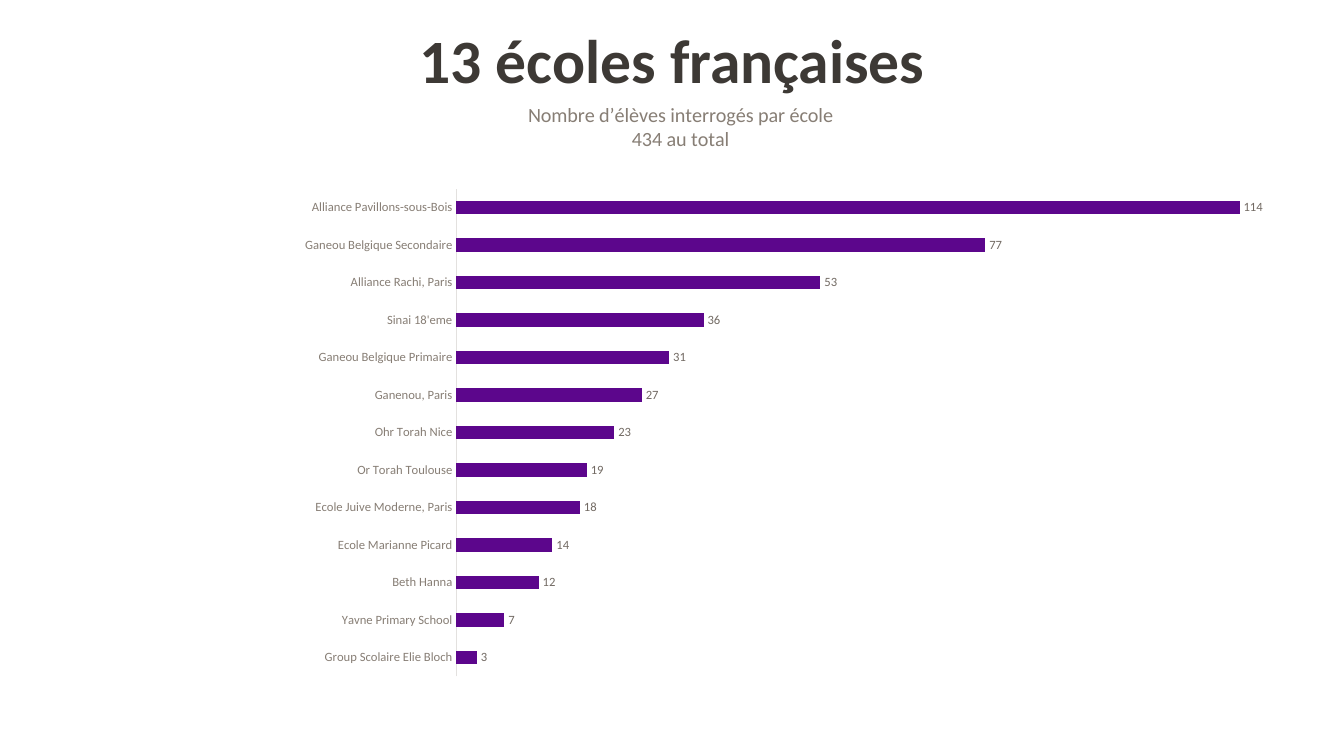
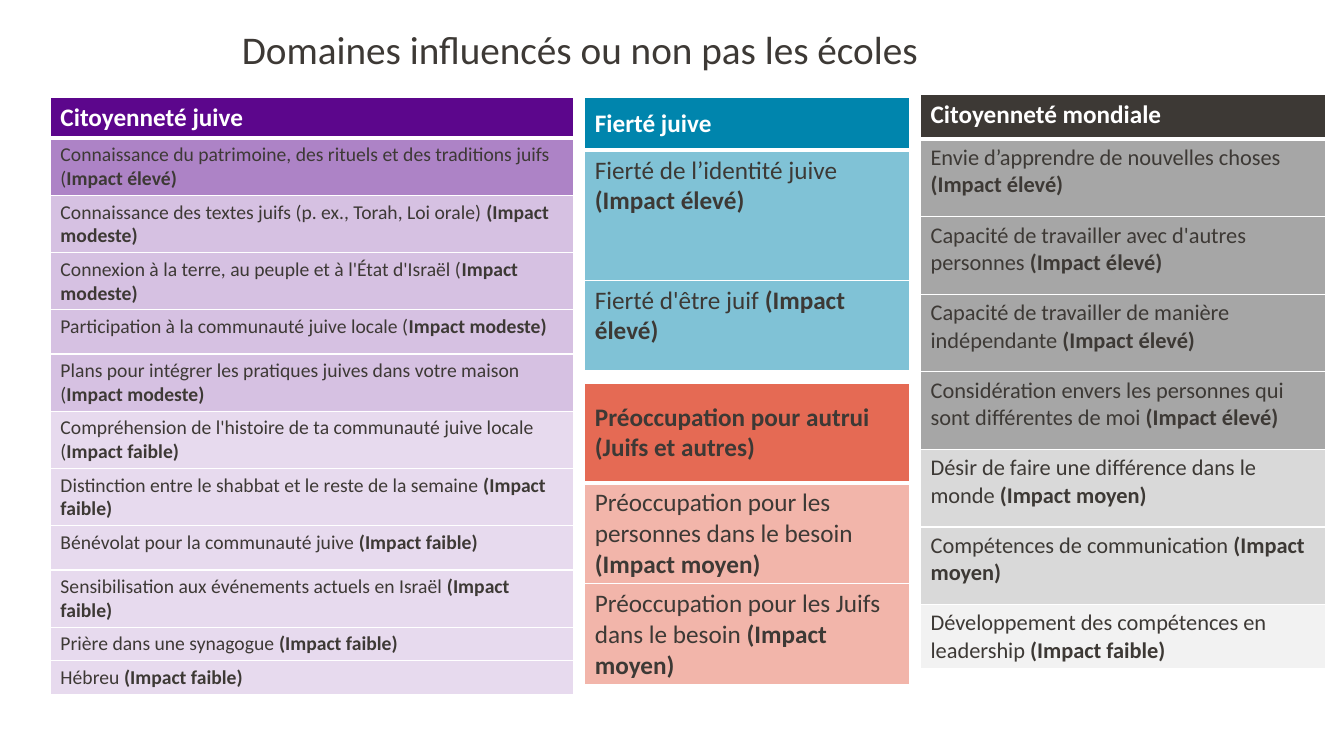
import pptx
import pptx.chart.data
import pptx.dml.color
import pptx.enum.chart
import pptx.enum.text
import pptx.oxml
import pptx.oxml.ns
import pptx.util

Inches, Pt = pptx.util.Inches, pptx.util.Pt
ANCHOR = pptx.enum.text.MSO_ANCHOR
ALIGN = pptx.enum.text.PP_ALIGN
FONT = "Calibri"
INK, WHITE, TAUPE, GREY = "3D3935", "FFFFFF", "877E75", "726A63"
PURPLE, PALE = "5C068C", "E3E1DF"

SCHOOLS = [
    ("Alliance Pavillons-sous-Bois", 114),
    ("Ganeou Belgique Secondaire", 77),
    ("Alliance Rachi, Paris", 53),
    ("Sinai 18'eme", 36),
    ("Ganeou Belgique Primaire", 31),
    ("Ganenou, Paris", 27),
    ("Ohr Torah Nice", 23),
    ("Or Torah Toulouse", 19),
    ("Ecole Juive Moderne, Paris", 18),
    ("Ecole Marianne Picard", 14),
    ("Beth Hanna", 12),
    ("Yavne Primary School", 7),
    ("Group Scolaire Elie Bloch", 3),
]
CAPTION = ["Nombre d’élèves interrogés par école", "434 au total"]

# In each row, the text after the bar is bold.
TABLES = [
    dict(
        head="Fierté juive", fill="0085AD", color=WHITE, size=18,
        at=(5.8, 0.97, 3.22), heights=[0.52, 1.29, 0.9], middle="head",
        groups=[("80C2D6", [
            "Fierté de l’identité juive |(Impact élevé)",
            "Fierté d'être juif |(Impact élevé)",
        ])],
    ),
    dict(
        head="Citoyenneté juive", fill=PURPLE, color=WHITE, size=14,
        at=(0.5, 0.97, 5.19), heights=[0.31] + [0.44] * 8 + [0.26] * 3,
        middle="",
        groups=[
            ("AD83C6", [
                "Connaissance du patrimoine, des rituels et des traditions"
                " juifs (|Impact élevé)",
            ]),
            ("D6C1E2", [
                "Connaissance des textes juifs (p. ex., Torah, Loi orale)"
                " |(Impact modeste)",
                "Connexion à la terre, au peuple et à l'État d'Israël"
                " (|Impact modeste)",
                "Participation à la communauté juive locale"
                " (|Impact modeste)",
                "Plans pour intégrer les pratiques juives dans votre maison"
                " (|Impact modeste)",
            ]),
            ("E7DAEE", [
                "Compréhension de l'histoire de ta communauté juive locale"
                " (|Impact faible)",
                "Distinction entre le shabbat et le reste de la semaine"
                " |(Impact faible)",
                "Bénévolat pour la communauté juive |(Impact faible)",
                "Sensibilisation aux événements actuels en Israël"
                " |(Impact faible)",
                "Prière dans une synagogue |(Impact faible)",
                "Hébreu |(Impact faible)",
            ]),
        ],
    ),
    dict(
        head="Préoccupation pour autrui (Juifs et autres)",
        fill="E56A54", color=INK, size=18,
        at=(5.8, 3.8, 3.22), heights=[0.99] * 3, middle="all",
        groups=[("F2B5AA", [
            "Préoccupation pour les personnes dans le besoin |(Impact moyen)",
            "Préoccupation pour les Juifs dans le besoin |(Impact moyen)",
        ])],
    ),
    dict(
        head="Citoyenneté mondiale", fill=INK, color=WHITE, size=16,
        at=(9.13, 0.94, 4.02), heights=[0.44] + [0.77] * 6 + [0.44],
        middle="",
        groups=[
            ("A6A6A6", [
                "Envie d’apprendre de nouvelles choses |(Impact élevé)",
                "Capacité de travailler avec d'autres personnes"
                " |(Impact élevé)",
                "Capacité de travailler de manière indépendante"
                " |(Impact élevé)",
                "Considération envers les personnes qui sont différentes"
                " de moi |(Impact élevé)",
            ]),
            ("D9D9D9", [
                "Désir de faire une différence dans le monde |(Impact moyen)",
                "Compétences de communication |(Impact moyen)",
            ]),
            ("F2F2F2", [
                "Développement des compétences en leadership"
                " |(Impact faible)",
            ]),
        ],
    ),
]


def rgb(code):
    return pptx.dml.color.RGBColor.from_string(code)


def style(font, size, color, bold=False):
    font.name, font.size, font.bold = FONT, Pt(size), bold
    font.color.rgb = rgb(color)


def write(para, text, size=18, color=INK, bold=False, align=None):
    """Fill a paragraph; the part after a bar is bold."""
    para.alignment = align
    plain, _, strong = text.partition("|")
    for part, heavy in ((plain, bold), (strong, True)):
        if part:
            run = para.add_run()
            run.text = part
            style(run.font, size, color, heavy)


def add_title(slide, text, left, top, size, bold=False):
    box = slide.shapes.add_textbox(
        Inches(left), Inches(top), Inches(11.5), Inches(0.91))
    frame = box.text_frame
    frame.word_wrap = True
    frame.vertical_anchor = ANCHOR.MIDDLE
    para = frame.paragraphs[0]
    para.line_spacing = 0.9
    write(para, text, size=size, bold=bold, align=ALIGN.CENTER)


def add_edges(cell, top, bottom):
    """Draw white cell borders; top and bottom widths are in points."""
    props = cell._tc.get_or_add_tcPr()
    edges = [("L", 1), ("R", 1), ("T", top), ("B", bottom)]
    for place, (side, width) in enumerate(edges):
        props.insert(place, pptx.oxml.parse_xml(
            f'<a:ln{side} {pptx.oxml.ns.nsdecls("a")} w="{Pt(width)}">'
            f'<a:solidFill><a:srgbClr val="{WHITE}"/></a:solidFill>'
            f'</a:ln{side}>'))


def add_grid(slide, data):
    rows = [(data["fill"], data["head"])]
    rows += [(fill, text) for fill, texts in data["groups"] for text in texts]
    left, top, width = map(Inches, data["at"])
    table = slide.shapes.add_table(
        len(rows), 1, left, top, width, Inches(sum(data["heights"]))).table
    table.horz_banding = False
    for num, (fill, text) in enumerate(rows):
        table.rows[num].height = Inches(data["heights"][num])
        cell = table.cell(num, 0)
        head = num == 0
        cell.fill.solid()
        cell.fill.fore_color.rgb = rgb(fill)
        add_edges(cell, 3 if num == 1 else 1, 3 if head else 1)
        if data["middle"] == "all" or (head and data["middle"] == "head"):
            cell.vertical_anchor = ANCHOR.MIDDLE
        write(cell.text_frame.paragraphs[0], text, bold=head,
              size=18 if head else data["size"],
              color=data["color"] if head else INK)


def set_plot(chart, **box):
    """Place the inner plot area, in fractions of the chart."""
    area = chart._chartSpace.chart.plotArea
    for old in area.findall(pptx.oxml.ns.qn("c:layout")):
        area.remove(old)
    modes = "".join(f'<c:{key}Mode val="edge"/>' for key in "xy")
    sizes = "".join(f'<c:{key} val="{val}"/>' for key, val in box.items())
    area.insert(0, pptx.oxml.parse_xml(
        f'<c:layout {pptx.oxml.ns.nsdecls("c")}><c:manualLayout>'
        f'<c:layoutTarget val="inner"/>{modes}{sizes}'
        f'</c:manualLayout></c:layout>'))


def add_bars(slide):
    kinds = pptx.enum.chart
    data = pptx.chart.data.CategoryChartData()
    data.categories = [name for name, _ in SCHOOLS]
    data.add_series("Series 1", [count for _, count in SCHOOLS])
    chart = slide.shapes.add_chart(
        kinds.XL_CHART_TYPE.BAR_CLUSTERED, Inches(0.32), Inches(0.8),
        Inches(12.86), Inches(6.23), data).chart
    style(chart.font, 10, INK)
    chart.has_legend = False
    chart.has_title = True
    frame = chart.chart_title.text_frame
    for num, line in enumerate(CAPTION):
        para = frame.add_paragraph() if num else frame.paragraphs[0]
        write(para, line, size=14.4, color=TAUPE)
    set_plot(chart, x=0.327, y=0.172, w=0.636, h=0.777)

    names = chart.category_axis
    names.reverse_order = True
    names.major_tick_mark = kinds.XL_TICK_MARK.NONE
    style(names.tick_labels.font, 9, TAUPE)
    names.format.line.color.rgb = rgb(PALE)
    names.format.line.width = Pt(0.75)
    counts = chart.value_axis
    counts.visible = counts.has_major_gridlines = False
    counts.minimum_scale, counts.maximum_scale = 0, 120

    plot = chart.plots[0]
    plot.gap_width = 182
    plot.vary_by_categories = False
    fill = plot.series[0].format.fill
    fill.solid()
    fill.fore_color.rgb = rgb(PURPLE)
    plot.has_data_labels = True
    labels = plot.data_labels
    labels.show_value = True
    labels.position = kinds.XL_LABEL_POSITION.OUTSIDE_END
    style(labels.font, 9, GREY)


def main():
    deck = pptx.Presentation()
    deck.slide_width, deck.slide_height = Inches(13.33), Inches(7.5)
    blank = deck.slide_layouts[6]

    slide = deck.slides.add_slide(blank)
    add_title(slide, "13 écoles françaises", 0.92, 0.18, 44, bold=True)
    add_bars(slide)

    slide = deck.slides.add_slide(blank)
    add_title(slide, "Domaines influencés ou non pas les écoles", 0, 0.06, 28)
    for data in TABLES:
        add_grid(slide, data)
    deck.save("out.pptx")


if __name__ == "__main__":
    main()
